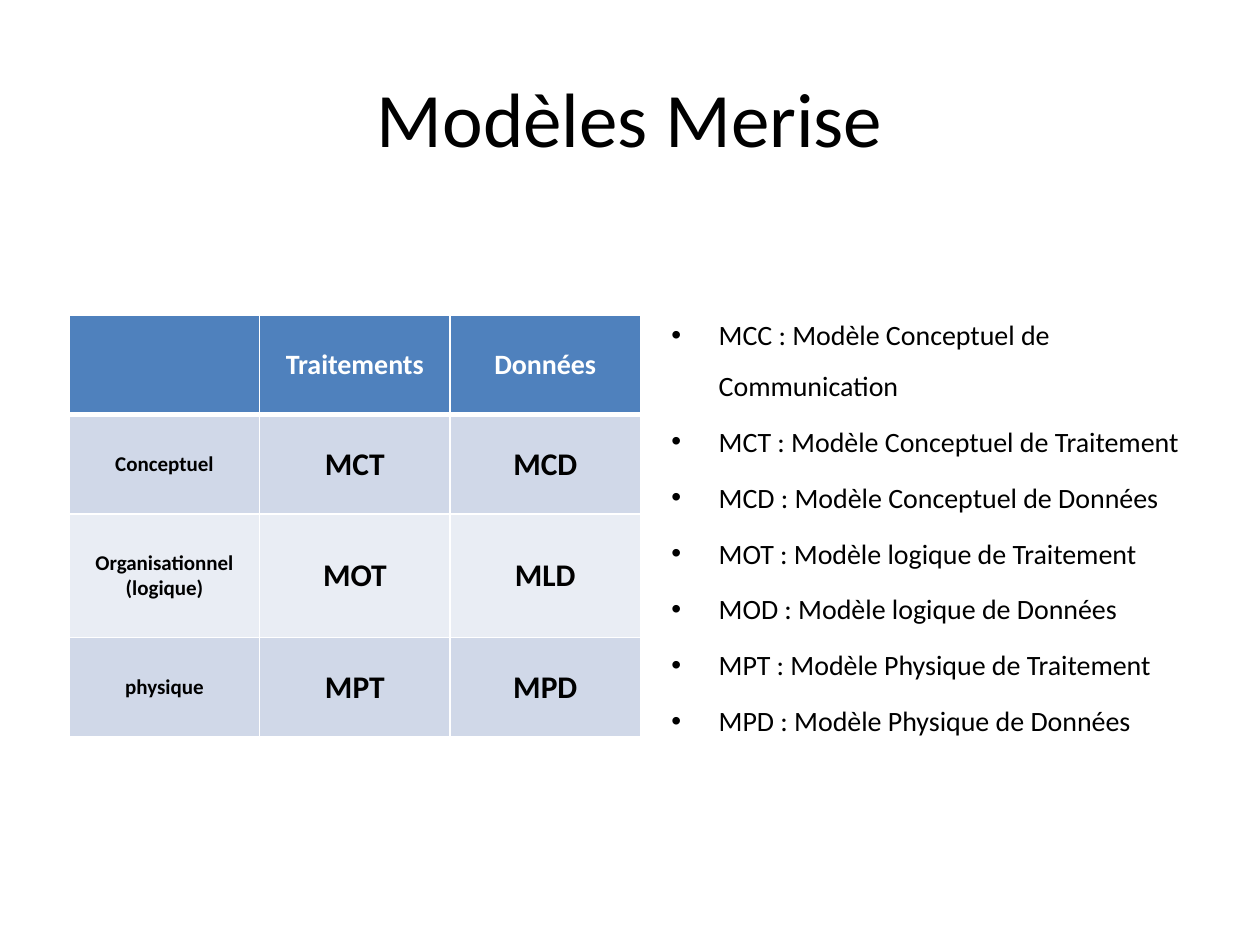
from dataclasses import dataclass

from lxml.etree import SubElement
from pptx import Presentation
from pptx.dml.color import RGBColor
from pptx.enum.text import MSO_ANCHOR as Anchor, PP_ALIGN as Align
from pptx.oxml.ns import qn
from pptx.util import Pt


@dataclass(frozen=True)
class Theme:
    font: str = "Calibri"
    text: str = "000000"
    light: str = "FFFFFF"
    header: str = "4F81BD"
    bands: tuple = ("D0D8E8", "E9EDF4")
    title_size: int = 44
    body_size: int = 16
    label_size: int = 12
    model_size: int = 18
    border: int = 1
    header_border: int = 3


TITLE = "Modèles Merise"
MODELS = [
    ["", "Traitements", "Données"],
    ["Conceptuel", "MCT", "MCD"],
    ["Organisationnel (logique)", "MOT", "MLD"],
    ["physique", "MPT", "MPD"],
]
COLUMN_WIDTH = 108.8
ROW_HEIGHTS = [56.9, 56.9, 70.6, 56.9]
DEFINITIONS = [
    "MCC : Modèle Conceptuel de Communication",
    "MCT : Modèle Conceptuel de Traitement",
    "MCD : Modèle Conceptuel de Données",
    "MOT : Modèle logique de Traitement",
    "MOD : Modèle logique de Données",
    "MPT : Modèle Physique de Traitement",
    "MPD : Modèle Physique de Données",
]


def apply(target, values):
    for name, value in values.items():
        setattr(target, name, value)


class SlideBuilder:
    def __init__(self, slide, theme):
        self.slide = slide
        self.theme = theme

    def add_text(self, paragraph, text, size, color=None, bold=False):
        run = paragraph.add_run()
        run.text = text
        apply(run.font, {"name": self.theme.font, "size": Pt(size), "bold": bold})
        run.font.color.rgb = RGBColor.from_string(color or self.theme.text)

    def text_frame(self, box, anchor):
        frame = self.slide.shapes.add_textbox(*map(Pt, box)).text_frame
        apply(frame, {"word_wrap": True, "vertical_anchor": anchor})
        return frame

    def title(self, text, box):
        paragraph = self.text_frame(box, Anchor.MIDDLE).paragraphs[0]
        paragraph.alignment = Align.CENTER
        self.add_text(paragraph, text, self.theme.title_size)

    def bullets(self, lines, box, indent):
        frame = self.text_frame(box, Anchor.TOP)
        spacing = {"line_spacing": 1.5, "space_before": Pt(self.theme.body_size * 0.2)}
        for index, line in enumerate(lines):
            paragraph = frame.add_paragraph() if index else frame.paragraphs[0]
            apply(paragraph, spacing)
            self.add_text(paragraph, line, self.theme.body_size)
            properties = paragraph._p.get_or_add_pPr()
            properties.set("marL", str(Pt(indent)))
            properties.set("indent", str(-Pt(indent)))
            SubElement(properties, qn("a:buFont"), typeface="Arial")
            SubElement(properties, qn("a:buChar"), char="•")

    def borders(self, cell, widths):
        properties = cell._tc.get_or_add_tcPr()
        for position, (side, width) in enumerate(widths.items()):
            line = SubElement(properties, qn(f"a:ln{side}"), w=str(Pt(width)))
            fill = SubElement(line, qn("a:solidFill"))
            SubElement(fill, qn("a:srgbClr"), val=self.theme.light)
            properties.insert(position, line)

    def cell(self, cell, text, row, column):
        theme = self.theme
        is_header = row == 0
        if is_header:
            fill, color, size = theme.header, theme.light, theme.body_size
        else:
            fill, color = theme.bands[(row - 1) % 2], theme.text
            size = theme.model_size if column else theme.label_size
        cell.fill.solid()
        cell.fill.fore_color.rgb = RGBColor.from_string(fill)
        cell.vertical_anchor = Anchor.MIDDLE
        widths = dict.fromkeys("LRTB", theme.border)
        if row < 2:
            widths["B" if is_header else "T"] = theme.header_border
        self.borders(cell, widths)
        if text:
            paragraph = cell.text_frame.paragraphs[0]
            paragraph.alignment = Align.CENTER
            self.add_text(paragraph, text, size, color, bold=True)

    def table(self, rows, left, top, column_width, row_heights):
        columns = len(rows[0])
        box = (left, top, column_width * columns, sum(row_heights))
        table = self.slide.shapes.add_table(len(rows), columns, *map(Pt, box)).table
        for column in table.columns:
            column.width = Pt(column_width)
        for row, height in enumerate(row_heights):
            table.rows[row].height = Pt(height)
            for column, text in enumerate(rows[row]):
                self.cell(table.cell(row, column), text, row, column)


def main():
    presentation = Presentation()
    apply(presentation, {"slide_width": Pt(720), "slide_height": Pt(540)})
    slide = presentation.slides.add_slide(presentation.slide_layouts[6])
    builder = SlideBuilder(slide, Theme())
    builder.title(TITLE, (36, 21.6, 648, 90))
    builder.table(MODELS, 39.6, 180, COLUMN_WIDTH, ROW_HEIGHTS)
    builder.bullets(DEFINITIONS, (376.6, 168.5, 307.4, 270), 27)
    presentation.save("out.pptx")


if __name__ == "__main__":
    main()
